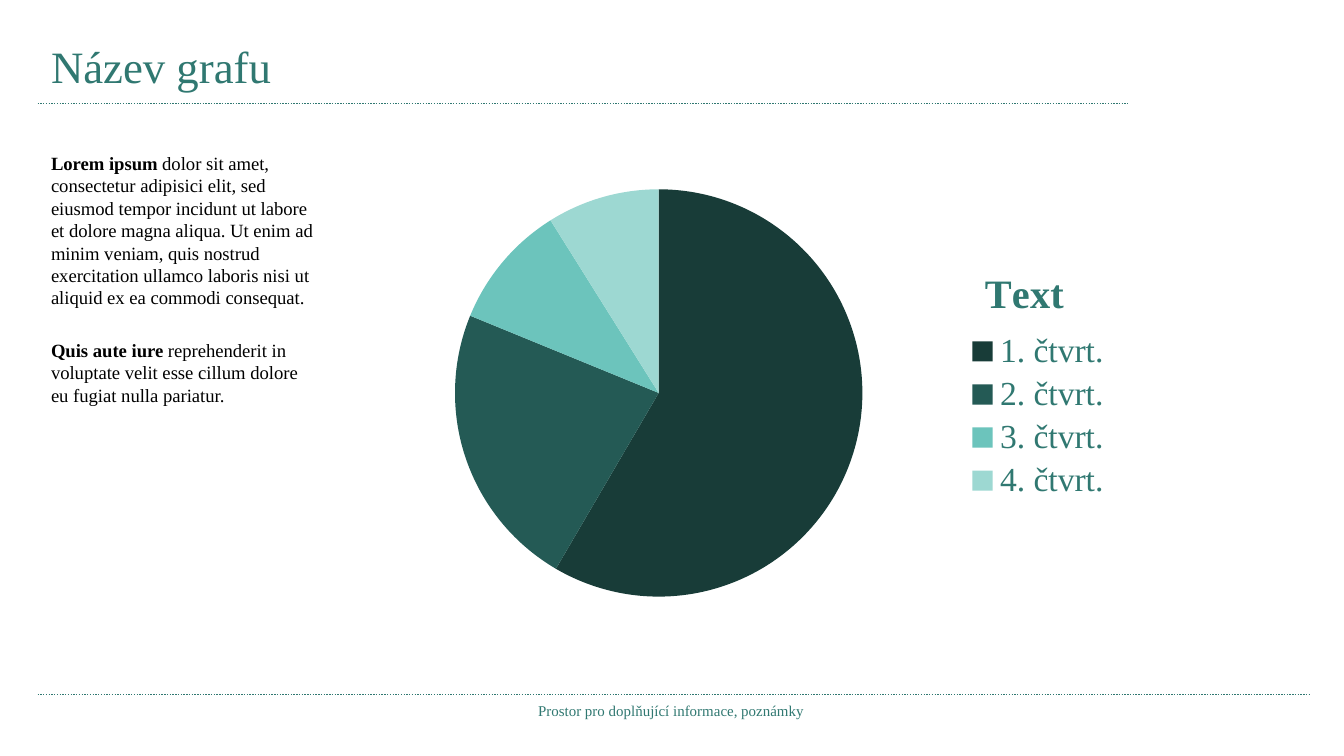
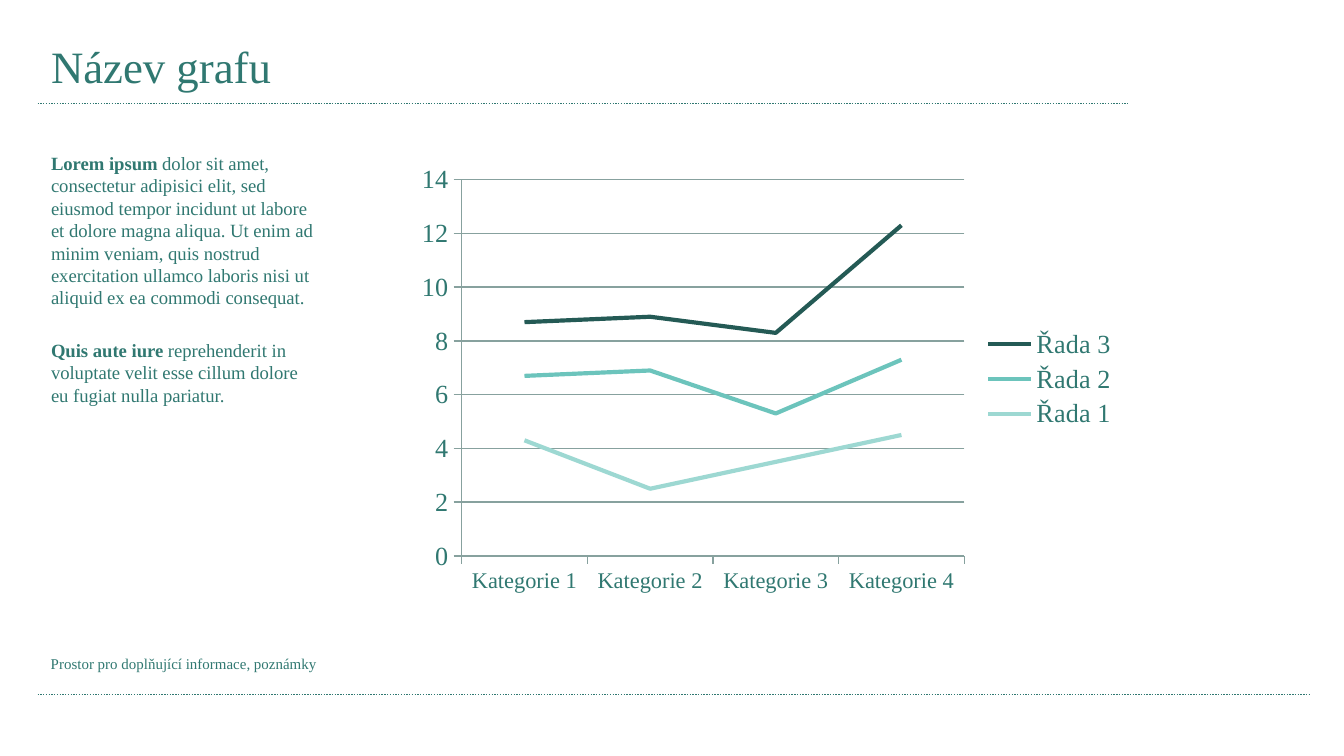
from lxml import etree
from pptx import Presentation
from pptx.chart.data import CategoryChartData
from pptx.dml.color import RGBColor
from pptx.enum.chart import XL_CHART_TYPE, XL_LEGEND_POSITION, XL_MARKER_STYLE, XL_TICK_MARK
from pptx.enum.dml import MSO_LINE
from pptx.enum.shapes import MSO_CONNECTOR
from pptx.enum.text import MSO_ANCHOR, MSO_AUTO_SIZE, PP_ALIGN
from pptx.oxml.ns import qn
from pptx.util import Cm, Pt

TEAL = RGBColor(0x30, 0x78, 0x71)
BLACK = RGBColor(0, 0, 0)
DARK = RGBColor(0x18, 0x3C, 0x38)
DEEP = RGBColor(0x24, 0x5A, 0x55)
MINT = RGBColor(0x6C, 0xC4, 0xBC)
PALE = RGBColor(0x9D, 0xD8, 0xD2)
GRAY = RGBColor(0x87, 0xA1, 0x9E)

PIE, LINE = XL_CHART_TYPE.PIE, XL_CHART_TYPE.LINE_STACKED
RIGHT, PLAIN = XL_LEGEND_POSITION.RIGHT, XL_MARKER_STYLE.NONE
OUT, NONE = XL_TICK_MARK.OUTSIDE, XL_TICK_MARK.NONE
DOTS, STRAIGHT = MSO_LINE.ROUND_DOT, MSO_CONNECTOR.STRAIGHT
LEFT, CENTER = PP_ALIGN.LEFT, PP_ALIGN.CENTER
TOP, MIDDLE, FIXED = MSO_ANCHOR.TOP, MSO_ANCHOR.MIDDLE, MSO_AUTO_SIZE.NONE

FACE = "Times New Roman"
EDGE = 0.71
RULES = [(1.96, 21.31), (13.13, 24.77)]
HEAD = "Název grafu"
NOTE = "Prostor pro doplňující informace, poznámky"
PARTS = [
    ("Lorem ipsum ", "dolor sit amet, consectetur adipisici elit, sed eiusmod tempor "
     "incidunt ut labore et dolore magna aliqua. Ut enim ad minim veniam, quis nostrud "
     "exercitation ullamco laboris nisi ut aliquid ex ea commodi consequat."),
    ("Quis aute iure ", "reprehenderit in voluptate velit esse cillum dolore eu "
     "fugiat nulla pariatur."),
]


def put(item, **values):
    for name, value in values.items():
        setattr(item, name, value)


def place(part, index, inner=False, **sides):
    for old in part.findall(qn("c:layout")):
        part.remove(old)
    layout = etree.Element(qn("c:layout"))
    manual = etree.SubElement(layout, qn("c:manualLayout"))
    tags = {"layoutTarget": "inner"} if inner else {}
    tags.update(xMode="edge", yMode="edge", **sides)
    for tag, value in tags.items():
        etree.SubElement(manual, qn("c:" + tag)).set("val", str(value))
    part.insert(index, layout)


class Deck:
    def __init__(self):
        self.file = Presentation()
        put(self.file, slide_width=Cm(25.4), slide_height=Cm(14.29))
        self.slide = None

    def font(self, font, size, color=TEAL, bold=False):
        put(font, name=FACE, size=Pt(size), bold=bold)
        font.color.rgb = color

    def frame(self, shape, box, anchor=TOP):
        for name, value in zip(("left", "top", "width", "height"), box):
            setattr(shape, name, Cm(value))
        put(shape.text_frame, word_wrap=True, auto_size=FIXED, vertical_anchor=anchor)
        return shape.text_frame

    def page(self):
        self.slide = self.file.slides.add_slide(self.file.slide_layouts[1])
        for top, end in RULES:
            self.rule(top, end)
        self.title()

    def rule(self, top, end):
        rule = self.slide.shapes.add_connector(STRAIGHT, Cm(EDGE), Cm(top), Cm(end), Cm(top))
        put(rule.line, width=Pt(0.75), dash_style=DOTS)
        rule.line.color.rgb = TEAL
        etree.SubElement(rule._element.spPr, qn("a:effectLst"))

    def title(self):
        frame = self.frame(self.slide.shapes.title, (EDGE, 0.53, 12.6, 1.42), MIDDLE)
        frame.text = HEAD
        para = frame.paragraphs[0]
        para.alignment = LEFT
        self.font(para.runs[0].font, 24)

    def body(self, color):
        frame = self.frame(self.slide.placeholders[1], (EDGE, 2.74, 5.59, 8.41))
        for index, pair in enumerate(PARTS):
            para = frame.add_paragraph() if index else frame.paragraphs[0]
            props = para._p.get_or_add_pPr()
            put(para, alignment=LEFT, space_before=Pt(16 if index else 0))
            for name in ("marL", "indent"):
                props.set(name, "0")
            etree.SubElement(props, qn("a:buNone"))
            for text, bold in zip(pair, (True, False)):
                run = para.add_run()
                run.text = text
                self.font(run.font, 10, color, bold)

    def note(self, box, align):
        shape = self.slide.shapes.add_textbox(0, 0, 0, 0)
        frame = self.frame(shape, box)
        frame.text = NOTE
        para = frame.paragraphs[0]
        para.alignment = align
        self.font(para.runs[0].font, 8)

    def chart(self, kind, box, cats, rows, size):
        data = CategoryChartData()
        data.categories = cats
        for name, values in rows:
            data.add_series(name, values)
        chart = self.slide.shapes.add_chart(kind, *map(Cm, box), data).chart
        self.font(chart.font, size)
        put(chart, has_title=False, has_legend=True)
        put(chart.legend, position=RIGHT, include_in_layout=False)
        self.font(chart.legend.font, size)
        return chart

    def pie(self):
        cats = [f"{n}. čtvrt." for n in range(1, 5)]
        rows = [("Series 1", (59, 23, 10, 9))]
        chart = self.chart(PIE, (6.71, 2.59, 14.53, 9.68), cats, rows, 18)
        chart.has_title = True
        frame = chart.chart_title.text_frame
        frame.text = "Text "
        self.font(frame.paragraphs[0].runs[0].font, 21.6, bold=True)
        place(chart.chart_title._element, 1, x=0.81, y=0.24)
        place(chart.legend._element, 1, x=0.81, y=0.37, w=0.18, h=0.35)
        place(chart._chartSpace.chart.plotArea, 0, True, x=0.13, y=0.1, w=0.53, h=0.8)
        plot = chart.plots[0]
        plot.vary_by_categories = True
        for index, color in enumerate((DARK, DEEP, MINT, PALE)):
            style = plot.series[0].points[index].format
            style.fill.solid()
            style.fill.fore_color.rgb = color
            style.line.fill.background()

    def lines(self):
        cats = [f"Kategorie {n}" for n in range(1, 5)]
        rows = [("Řada 1", (4.3, 2.5, 3.5, 4.5)),
                ("Řada 2", (2.4, 4.4, 1.8, 2.8)),
                ("Řada 3", (2, 2, 3, 5))]
        chart = self.chart(LINE, (7.7, 2.95, 13.67, 8.43), cats, rows, 14)
        place(chart._chartSpace.chart.plotArea, 0, True, x=0.075, y=0.053, w=0.695, h=0.844)
        plot = chart.plots[0]
        plot.vary_by_categories = False
        for row, color in zip(plot.series, (PALE, MINT, DEEP)):
            row.smooth = False
            row.marker.style = PLAIN
            row.format.line.width = Pt(2.25)
            row.format.line.color.rgb = color
        value, cat = chart.value_axis, chart.category_axis
        put(value, minimum_scale=0, maximum_scale=14, major_unit=2, has_major_gridlines=True)
        for axis, size in ((value, 14), (cat, 12)):
            put(axis, major_tick_mark=OUT, minor_tick_mark=NONE)
            self.font(axis.tick_labels.font, size)
        for line in (value.format.line, cat.format.line, value.major_gridlines.format.line):
            line.width = Pt(0.75)
            line.color.rgb = GRAY


def main():
    deck = Deck()
    deck.page()
    deck.body(BLACK)
    deck.pie()
    deck.note((7.49, 13.13, 10.39, 0.58), CENTER)
    deck.page()
    deck.body(TEAL)
    deck.lines()
    deck.note((EDGE, 12.24, 7.01, 0.58), LEFT)
    deck.file.save("out.pptx")


if __name__ == "__main__":
    main()
